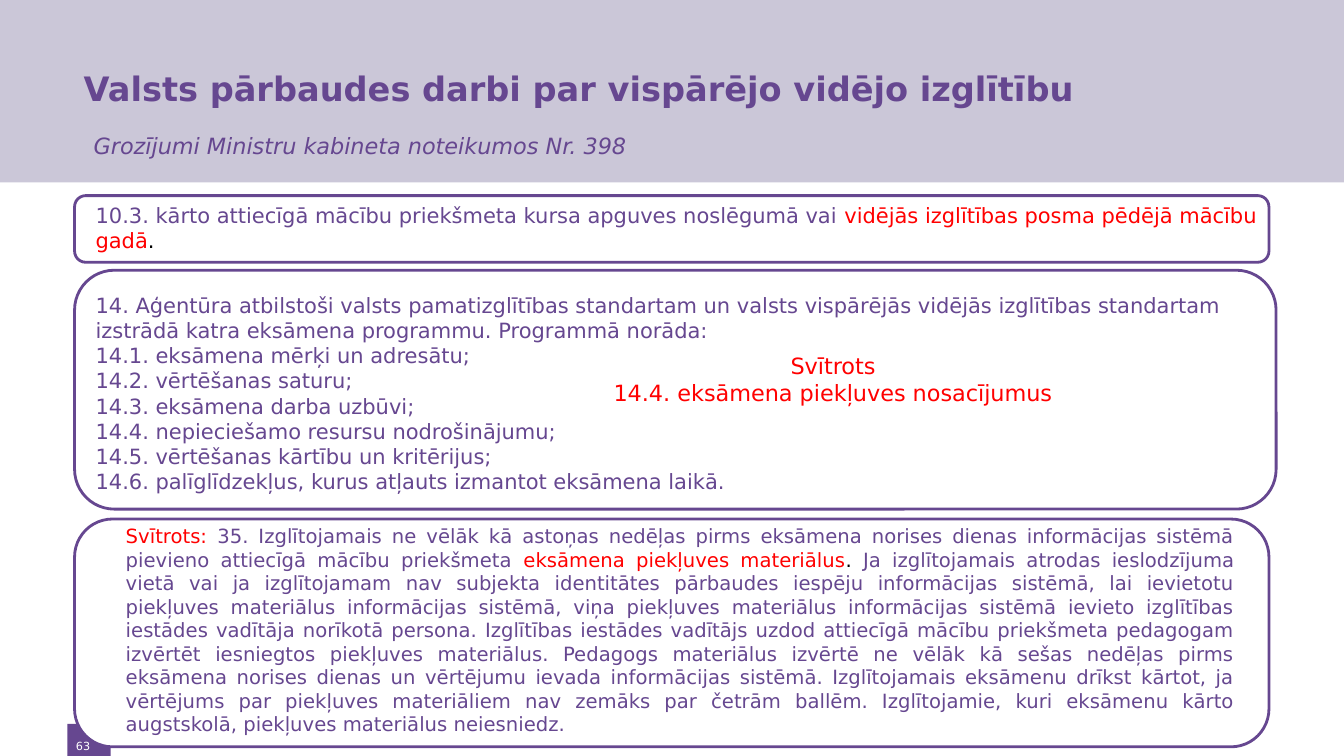
from dataclasses import dataclass

from pptx import Presentation
from pptx.dml.color import RGBColor
from pptx.enum.shapes import MSO_SHAPE
from pptx.enum.text import MSO_ANCHOR, MSO_AUTO_SIZE, PP_ALIGN
from pptx.util import Cm, Pt

RECTANGLE, ROUNDED = MSO_SHAPE.RECTANGLE, MSO_SHAPE.ROUNDED_RECTANGLE
TOP, MIDDLE = MSO_ANCHOR.TOP, MSO_ANCHOR.MIDDLE
LEFT, CENTER, JUSTIFY = PP_ALIGN.LEFT, PP_ALIGN.CENTER, PP_ALIGN.JUSTIFY
FIXED, GROW = MSO_AUTO_SIZE.NONE, MSO_AUTO_SIZE.SHAPE_TO_FIT_TEXT
TITLE_ONLY = 5


@dataclass(frozen=True)
class Theme:
    font: str = "DejaVu Sans"
    violet: str = "664790"
    lilac: str = "CBC7D8"
    red: str = "FF0000"
    black: str = "000000"
    white: str = "FFFFFF"
    title_size: int = 24
    subtitle_size: int = 16
    clause_size: int = 15
    long_clause_size: int = 14
    number_size: int = 8
    outline: int = 2


class SlideBuilder:
    """Holds the theme and the current slide; lengths are in centimetres."""

    def __init__(self, slide, theme):
        self.slide = slide
        self.theme = theme

    def panel(self, place, kind, fill, line=None):
        panel = self.slide.shapes.add_shape(kind, *map(Cm, place))
        panel.shadow.inherit = False
        panel.fill.solid()
        panel.fill.fore_color.rgb = RGBColor.from_string(fill)
        if line:
            panel.line.color.rgb = RGBColor.from_string(line)
            panel.line.width = Pt(self.theme.outline)
        else:
            panel.line.fill.background()

    def fill_text(self, frame, paragraphs, size, align=LEFT, bold=False, italic=False):
        """Each paragraph is a list of (text, colour) spans; a newline breaks the line."""
        frame.word_wrap = True
        for index, spans in enumerate(paragraphs):
            para = frame.add_paragraph() if index else frame.paragraphs[0]
            para.alignment = align
            for text, colour in spans:
                for row, line in enumerate(text.split("\n")):
                    if row:
                        para.add_line_break()
                    span = para.add_run()
                    span.text = line
                    span.font.name = self.theme.font
                    span.font.size = Pt(size)
                    span.font.bold = bold
                    span.font.italic = italic
                    span.font.color.rgb = RGBColor.from_string(colour)

    def text(self, place, paragraphs, size, **style):
        box = self.slide.shapes.add_textbox(*map(Cm, place))
        self.fill_text(box.text_frame, paragraphs, size, **style)
        box.text_frame.auto_size = GROW
        box.text_frame.vertical_anchor = TOP
        return box

    def title(self, place, text):
        title = self.slide.shapes.title
        title.left, title.top, title.width, title.height = map(Cm, place)
        frame = title.text_frame
        frame.auto_size = FIXED
        frame.vertical_anchor = MIDDLE
        frame.margin_left = 0
        self.fill_text(frame, [[(text, self.theme.violet)]], self.theme.title_size, bold=True)
        # Bring the title in front of the header band
        self.slide.shapes._spTree.append(title._element)

    def page_number(self, place, number):
        box = self.text(place, [[(number, self.theme.white)]],
                        self.theme.number_size, align=CENTER)
        frame = box.text_frame
        frame.auto_size = FIXED
        frame.vertical_anchor = MIDDLE
        frame.margin_left = frame.margin_right = Cm(0.1)
        frame.margin_top = frame.margin_bottom = Cm(0.1)


def main():
    deck = Presentation()
    deck.slide_width, deck.slide_height = Cm(33.87), Cm(19.05)
    theme = Theme()
    page = SlideBuilder(deck.slides.add_slide(deck.slide_layouts[TITLE_ONLY]), theme)
    violet, red, black = theme.violet, theme.red, theme.black

    # Page tab and header band
    page.panel((1.7, 18.24, 1.09, 0.81), RECTANGLE, violet)
    page.panel((0, 0, 33.87, 4.6), RECTANGLE, theme.lilac)

    # Outlined panels
    for top, width, height in ((13.08, 30.1, 5.74), (6.81, 30.28, 6.02), (4.93, 30.1, 1.68)):
        page.panel((1.88, top, width, height), ROUNDED, theme.white, violet)

    # Header text and page number
    page.page_number((1.55, 18.39, 1.09, 0.81), "63")
    page.title((2.11, 1.22, 31.09, 2.01),
               "Valsts pārbaudes darbi par vispārējo vidējo izglītību ")
    page.text((2.11, 3.2, 19.53, 0.94),
              [[("Grozījumi Ministru kabineta noteikumos Nr. 398 ", violet)]],
              theme.subtitle_size, italic=True)

    # Clause 10.3
    page.text((2.16, 4.98, 29.9, 1.55), [[
        ("10.3. kārto attiecīgā mācību priekšmeta kursa apguves noslēgumā vai ", violet),
        ("vidējās izglītības posma pēdējā mācību gadā", red),
        (".", black),
    ]], theme.clause_size)

    # Clause 14 and its struck item
    page.text((2.16, 7.24, 29.82, 5.38), [[(
        "14. Aģentūra atbilstoši valsts pamatizglītības standartam un valsts vispārējās "
        "vidējās izglītības standartam izstrādā katra eksāmena programmu. Programmā norāda:\n"
        "14.1. eksāmena mērķi un adresātu;\n"
        "14.2. vērtēšanas saturu;\n"
        "14.3. eksāmena darba uzbūvi;\n"
        "14.4. nepieciešamo resursu nodrošinājumu;\n"
        "14.5. vērtēšanas kārtību un kritērijus;\n"
        "14.6. palīglīdzekļus, kurus atļauts izmantot eksāmena laikā.", violet)]],
        theme.clause_size)
    page.text((13.82, 8.74, 14.35, 1.63),
              [[("Svītrots", red)], [("14.4. eksāmena piekļuves nosacījumus", red)]],
              theme.subtitle_size, align=CENTER)

    # Clause 35
    page.text((2.92, 13.08, 28.45, 5.64), [[
        ("Svītrots: ", red),
        ("35. Izglītojamais ne vēlāk kā astoņas nedēļas pirms eksāmena norises dienas "
         "informācijas sistēmā pievieno attiecīgā mācību priekšmeta ", violet),
        ("eksāmena piekļuves materiālus", red),
        (". ", black),
        ("Ja izglītojamais atrodas ieslodzījuma vietā vai ja izglītojamam nav subjekta "
         "identitātes pārbaudes iespēju informācijas sistēmā, lai ievietotu piekļuves "
         "materiālus informācijas sistēmā, viņa piekļuves materiālus informācijas sistēmā "
         "ievieto izglītības iestādes vadītāja norīkotā persona. Izglītības iestādes vadītājs "
         "uzdod attiecīgā mācību priekšmeta pedagogam izvērtēt iesniegtos piekļuves "
         "materiālus. Pedagogs materiālus izvērtē ne vēlāk kā sešas nedēļas pirms eksāmena "
         "norises dienas un vērtējumu ievada informācijas sistēmā. Izglītojamais eksāmenu "
         "drīkst kārtot, ja vērtējums par piekļuves materiāliem nav zemāks par četrām "
         "ballēm. Izglītojamie, kuri eksāmenu kārto augstskolā, piekļuves materiālus "
         "neiesniedz.", violet),
    ]], theme.long_clause_size, align=JUSTIFY)

    deck.save("out.pptx")


if __name__ == "__main__":
    main()
